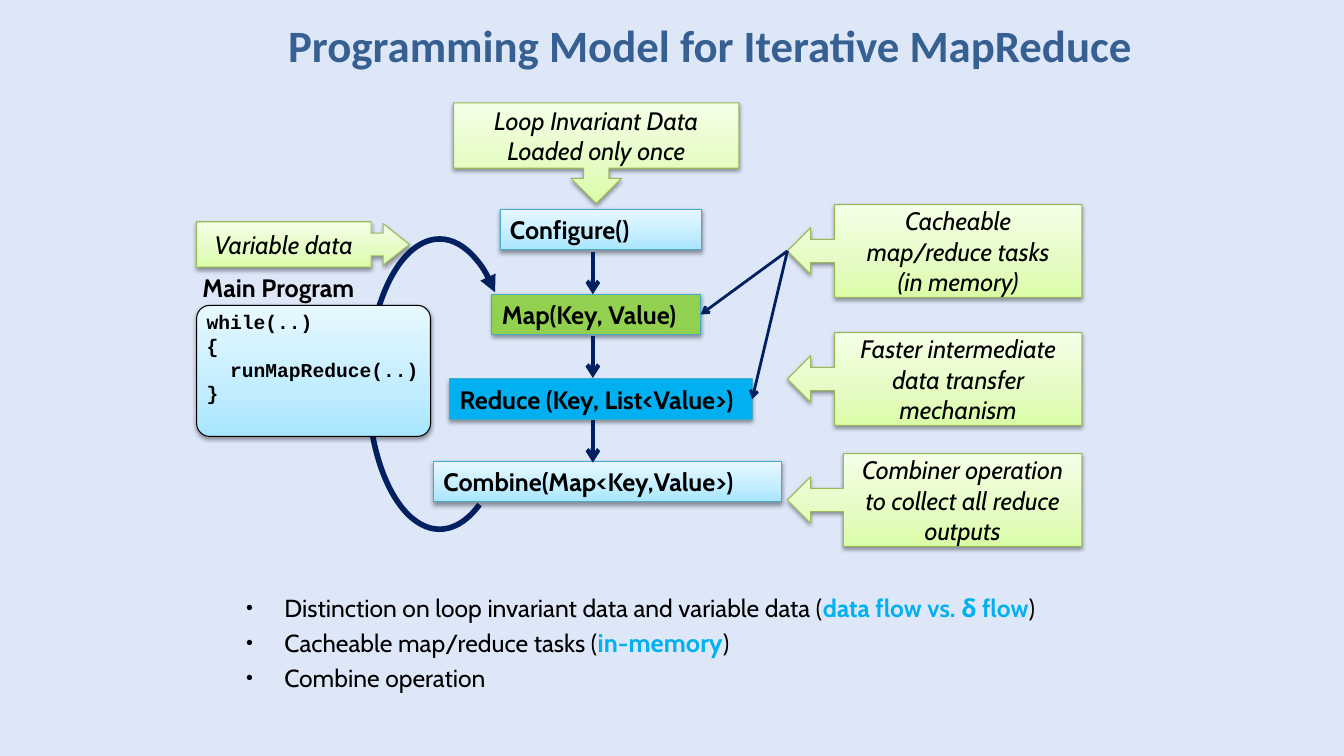
from copy import deepcopy
from lxml.etree import SubElement
from pptx import Presentation
from pptx.dml.color import RGBColor
from pptx.enum.shapes import MSO_CONNECTOR, MSO_SHAPE as SHAPE
from pptx.enum.text import MSO_ANCHOR as ANCHOR, MSO_AUTO_SIZE as FIT, PP_ALIGN as ALIGN
from pptx.oxml.ns import qn
from pptx.util import Pt

PX = 9144
COLORS = {
    "bg": "DEE7F8", "title": "376092", "navy": "002060", "black": "000000",
    "map": "92D050", "reduce": "00B0F0", "teal": "46AAC5", "olive": "98B955",
}
GRADIENTS = {
    "sky": ["A7E6FF", "C1EDFF", "E7F8FF"],
    "lime": ["DAFDA7", "E4FCC2", "F5FFE7"],
}
RGB = {name: RGBColor.from_string(value) for name, value in COLORS.items()}

LABEL = {"name": "Cabin", "size": Pt(18), "bold": True}
NOTE = {"name": "Cabin", "size": Pt(18), "italic": True}
CODE = {"name": "Courier New", "size": Pt(14), "bold": True}
HEADING = {"name": "Calibri", "size": Pt(32), "bold": True}
BULLET = {"name": "Cabin", "size": Pt(17.6), "bold": False}
TERM = {"name": "Cabin", "size": Pt(17.6), "bold": True}
LARGE_TERM = {"name": "Cabin", "size": Pt(18.2), "bold": True}

LEFT_TOP = {"vertical_anchor": ANCHOR.TOP, "auto_size": FIT.SHAPE_TO_FIT_TEXT, "word_wrap": True}
ONE_LINE = {**LEFT_TOP, "word_wrap": False}
MIDDLE = {"vertical_anchor": ANCHOR.MIDDLE, "auto_size": FIT.NONE, "word_wrap": True}


def write(tf, text, font, frame, align=ALIGN.LEFT, color="black"):
    tf.text = text
    for key, value in frame.items():
        setattr(tf, key, value)
    for p in tf.paragraphs:
        p.alignment = align
        for r in p.runs:
            r.font.color.rgb = RGB[color]
            for key, value in font.items():
                setattr(r.font, key, value)


def draw_line(s, width, end=None, head=None):
    s.line.color.rgb = RGB["navy"]
    s.line.width = Pt(width)
    spPr = s._element.spPr
    if end:
        SubElement(spPr.find(qn("a:ln")), qn(f"a:{end}"), type=head)
    SubElement(spPr, qn("a:effectLst"))


prs = Presentation()
prs.slide_width, prs.slide_height = 1333 * PX, 750 * PX
slide = prs.slides.add_slide(prs.slide_layouts[1])
slide.background.fill.solid()
slide.background.fill.fore_color.rgb = RGB["bg"]
shapes = slide.shapes

title, body = slide.placeholders
for s, box in [(title, (242, 17, 925, 55)), (body, (234, 583, 908, 115))]:
    s.left, s.top, s.width, s.height = [v * PX for v in box]
write(title.text_frame, "Programming Model for Iterative MapReduce", HEADING, MIDDLE,
      ALIGN.CENTER, "title")

bullets = [
    [("Distinction on loop invariant data and variable data (", BULLET, "black"),
     ("data flow vs. δ flow", TERM, "reduce"), (")", BULLET, "black")],
    [("Cacheable map/reduce tasks (", BULLET, "black"),
     ("in-memory", LARGE_TERM, "reduce"), (")", BULLET, "black")],
    [("Combine operation", BULLET, "black")],
]
tf = body.text_frame
tf.auto_size = FIT.NONE
for i, runs in enumerate(bullets):
    p = tf.add_paragraph() if i else tf.paragraphs[0]
    pPr = p._p.get_or_add_pPr()
    pPr.set("marL", str(38 * PX))
    pPr.set("indent", str(-38 * PX))
    SubElement(pPr, qn("a:buSzPct"), val="80000")
    SubElement(pPr, qn("a:buChar"), char="•")
    p.space_before = Pt(3.5 if i else 0)
    for text, font, color in runs:
        r = p.add_run()
        r.text = text
        r.font.color.rgb = RGB[color]
        for key, value in font.items():
            setattr(r.font, key, value)

loop = shapes.add_shape(SHAPE.ARC, 292 * PX, 310 * PX, 288 * PX, 142 * PX)
loop.adjustments[0], loop.adjustments[1] = 89.31, 11
loop.rotation = 90
loop._element.spPr.xfrm.set("flipV", "1")
loop.fill.background()
draw_line(loop, 4, "headEnd", "triangle")

RECT, LEFT_CALLOUT = SHAPE.RECTANGLE, SHAPE.LEFT_ARROW_CALLOUT
blocks = [
    ("reduce", RECT, (446, 376, 300, 40), [], "reduce", "teal",
     "Reduce (Key, List<Value>)", LEFT_TOP),
    ("map", RECT, (488, 292, 207, 40), [], "map", "teal", "Map(Key, Value)", ONE_LINE),
    ("configure", RECT, (496, 208, 200, 40), [], "sky", "teal", "Configure()", LEFT_TOP),
    ("combine", RECT, (430, 458, 345, 40), [], "sky", "teal",
     "Combine(Map<Key,Value>)", LEFT_TOP),
    ("program", SHAPE.ROUNDED_RECTANGLE, (195, 303, 232, 130), [0.1], "sky", "black",
     "", LEFT_TOP),
    ("invariant", SHAPE.DOWN_ARROW_CALLOUT, (450, 102, 283, 100), [], "lime", "olive",
     "Loop Invariant Data\nLoaded only once", MIDDLE),
    ("transfer", LEFT_CALLOUT, (781, 330, 292, 92), [0.25, 0.25, 0.25, 0.84], "lime", "olive",
     "Faster intermediate data transfer mechanism", MIDDLE),
    ("combiner", LEFT_CALLOUT, (781, 450, 292, 92), [0.25, 0.25, 0.25, 0.81], "lime", "olive",
     "Combiner operation to collect all reduce outputs", MIDDLE),
    ("cacheable", LEFT_CALLOUT, (781, 203, 292, 92), [0.25, 0.25, 0.25, 0.84], "lime", "olive",
     "Cacheable map/reduce tasks\n(in memory)", MIDDLE),
    ("variable", SHAPE.RIGHT_ARROW_CALLOUT, (195, 220, 211, 45), [0.5, 0.46, 0.58, 0.82],
     "lime", "olive", "Variable data", MIDDLE),
]
placed = {}
for name, kind, box, adjust, fill, line, text, frame in blocks:
    s = placed[name] = shapes.add_shape(kind, *[v * PX for v in box])
    for i, value in enumerate(adjust):
        s.adjustments[i] = value
    if fill in GRADIENTS:
        s.fill.gradient()
        s.fill.gradient_angle = 90
        gsLst = s._element.spPr.find(qn("a:gradFill")).find(qn("a:gsLst"))
        gsLst.insert(1, deepcopy(gsLst[0]))
        for stop, position, color in zip(s.fill.gradient_stops, [0, 0.35, 1], GRADIENTS[fill]):
            stop.position = position
            stop.color.rgb = RGBColor.from_string(color)
    else:
        s.fill.solid()
        s.fill.fore_color.rgb = RGB[fill]
    s.line.color.rgb = RGB[line]
    s.line.width = Pt(0.75)
    s.shadow.inherit = False
    shadow = SubElement(s._element.spPr.find(qn("a:effectLst")), qn("a:outerShdw"),
                        blurRad="40000", dist="20000", dir="5400000", rotWithShape="0")
    shade = SubElement(shadow, qn("a:srgbClr"), val=COLORS["black"])
    SubElement(shade, qn("a:alpha"), val="38000")
    if text:
        is_note = frame is MIDDLE
        write(s.text_frame, text, NOTE if is_note else LABEL, frame,
              ALIGN.CENTER if is_note else ALIGN.LEFT)

for box, text, font in [
    ((191, 265, 175, 40), "Main Program", LABEL),
    ((195, 303, 232, 135), "while(..)\n{\n  runMapReduce(..)\n}", CODE),
]:
    s = shapes.add_textbox(*[v * PX for v in box])
    write(s.text_frame, text, font, ONE_LINE)

for y in (250, 333, 417):
    s = shapes.add_connector(MSO_CONNECTOR.STRAIGHT, 588 * PX, y * PX, 588 * PX, (y + 42) * PX)
    draw_line(s, 3, "tailEnd", "arrow")

for task in ("map", "reduce"):
    s = shapes.add_connector(MSO_CONNECTOR.STRAIGHT, 0, 0, 0, 0)
    s.begin_connect(placed["cacheable"], 1)
    s.end_connect(placed[task], 3)
    draw_line(s, 2, "tailEnd", "arrow")

prs.save("out.pptx")
